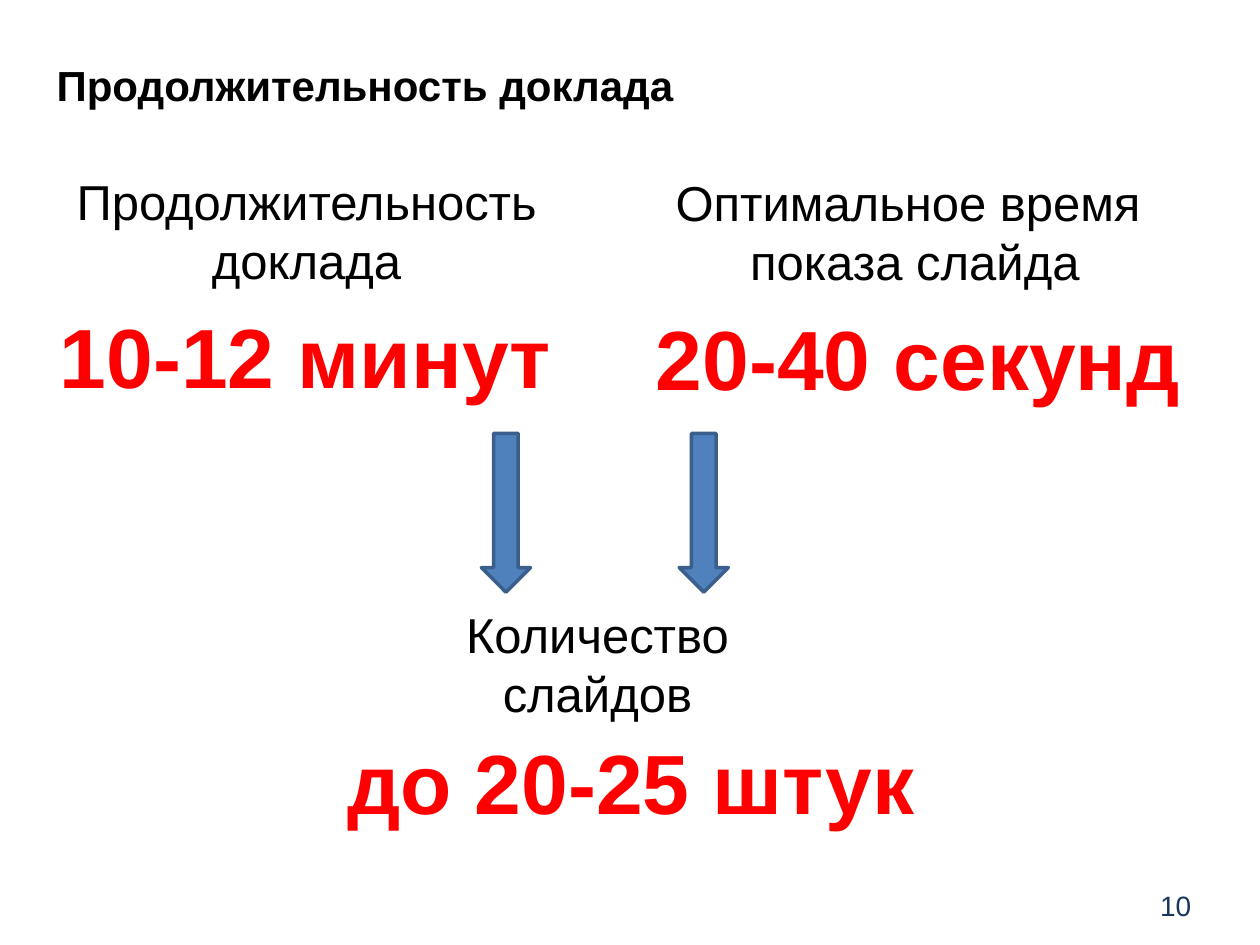
from pptx import Presentation
from pptx.dml.color import RGBColor
from pptx.enum.shapes import MSO_SHAPE
from pptx.enum.text import MSO_ANCHOR, MSO_AUTO_SIZE, PP_ALIGN
from pptx.util import Inches, Pt

LEFT, CENTER = PP_ALIGN.LEFT, PP_ALIGN.CENTER
TOP, MIDDLE, BOTTOM = MSO_ANCHOR.TOP, MSO_ANCHOR.MIDDLE, MSO_ANCHOR.BOTTOM

THEME = {
    "title": {"name": "Arial", "size": Pt(24), "bold": True, "color": "000000"},
    "caption": {"name": "Arial", "size": Pt(28), "bold": False, "color": "000000"},
    "value": {"name": "Arial", "size": Pt(48), "bold": True, "color": "FF0000"},
    "number": {"name": "Arial", "size": Pt(16), "bold": False, "color": "17375E"},
    "arrow_fill": "4F81BD",
    "arrow_line": "3A5F8C",
}


def write(shape, style, lines, anchor=TOP, wrap=False):
    """Fill a shape with (text, alignment) paragraphs in one theme style."""
    frame = shape.text_frame
    frame.word_wrap = wrap
    frame.auto_size = MSO_AUTO_SIZE.NONE if wrap else MSO_AUTO_SIZE.SHAPE_TO_FIT_TEXT
    frame.vertical_anchor = anchor
    for index, (text, alignment) in enumerate(lines):
        paragraph = frame.add_paragraph() if index else frame.paragraphs[0]
        paragraph.alignment = alignment
        run = paragraph.add_run()
        run.text = text
        for attribute, value in THEME[style].items():
            if attribute == "color":
                run.font.color.rgb = RGBColor.from_string(value)
            else:
                setattr(run.font, attribute, value)


def add_text(box, style, lines, anchor=TOP):
    shape = slide.shapes.add_textbox(*map(Inches, box))
    write(shape, style, lines, anchor)


prs = Presentation()
prs.slide_width, prs.slide_height = Inches(10), Inches(7.5)
slide = prs.slides.add_slide(prs.slide_layouts[5])

add_text((9.09, 7, 0.48, 0.37), "number", [("10", CENTER)], MIDDLE)

title = slide.shapes.title
title.left, title.top = Inches(0.35), Inches(0.13)
title.width, title.height = Inches(8.11), Inches(0.79)
write(title, "title", [("Продолжительность доклада", LEFT)], BOTTOM, wrap=True)

# Each fact: caption box and lines, then value box and text
facts = [
    ((0.51, 1.31, 4.01, 1.04), [("Продолжительность", LEFT), ("доклада", CENTER)],
     (0.35, 2.37, 4.15, 0.91), "10-12 минут"),
    ((5.24, 1.32, 4.04, 1.04), [("Оптимальное время ", CENTER), ("показа слайда", CENTER)],
     (5.08, 2.38, 4.41, 0.91), "20-40 секунд"),
    ((3.6, 4.75, 2.42, 1.04), [("Количество", LEFT), ("слайдов", CENTER)],
     (2.63, 5.75, 4.76, 0.91), "до 20-25 штук"),
]
for caption_box, caption, value_box, value in facts:
    add_text(caption_box, "caption", caption)
    add_text(value_box, "value", [(value, CENTER)])

for arrow_left in (3.82, 5.39):
    arrow = slide.shapes.add_shape(
        MSO_SHAPE.DOWN_ARROW, Inches(arrow_left), Inches(3.44), Inches(0.39), Inches(1.26))
    arrow.shadow.inherit = False
    arrow.fill.solid()
    arrow.fill.fore_color.rgb = RGBColor.from_string(THEME["arrow_fill"])
    arrow.line.color.rgb = RGBColor.from_string(THEME["arrow_line"])
    arrow.line.width = Pt(2)

prs.save("out.pptx")
